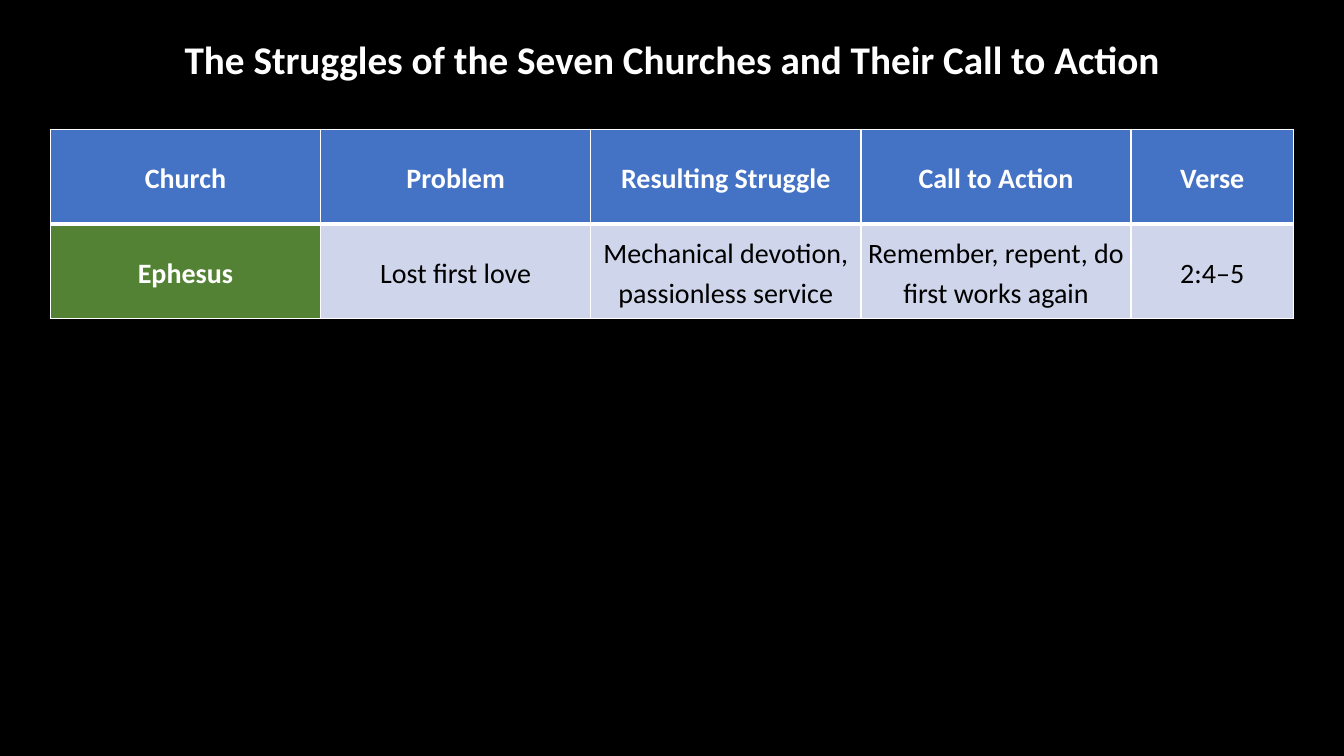
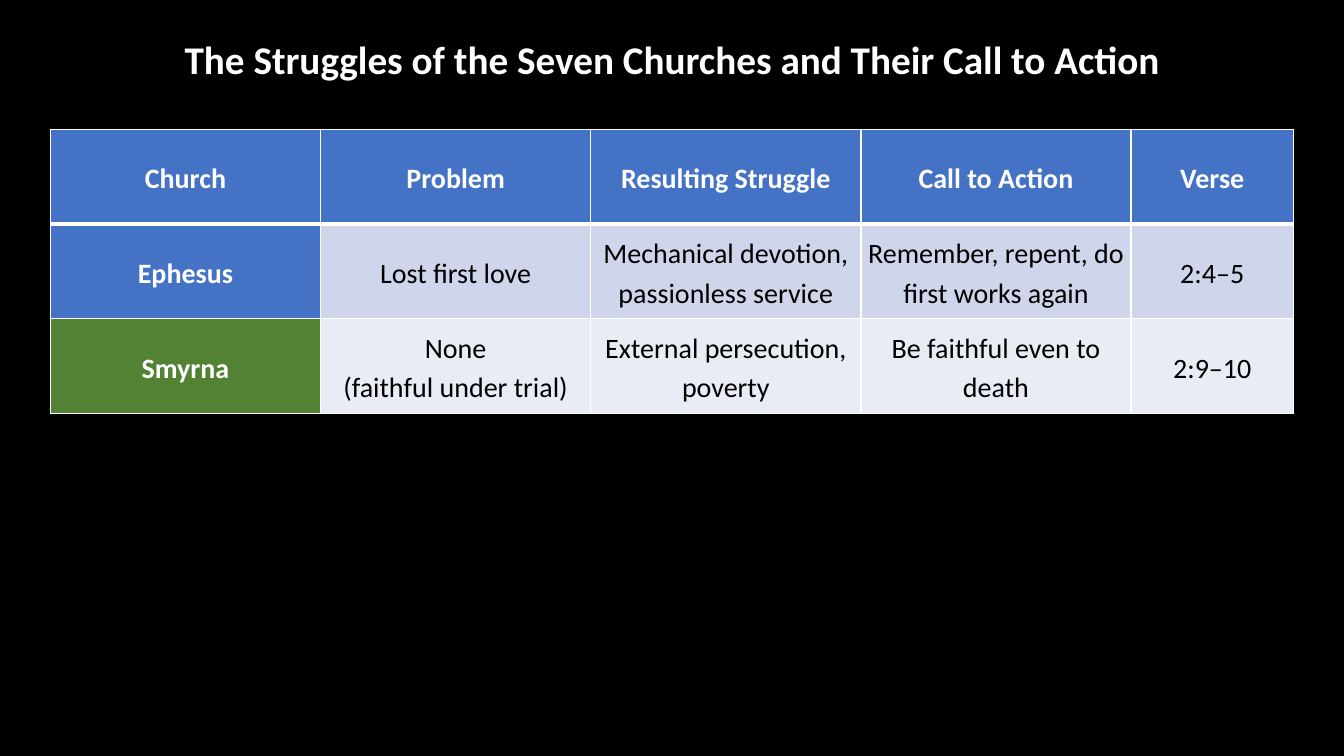
from lxml import etree
from pptx import Presentation
from pptx.dml.color import RGBColor
from pptx.enum import text
from pptx.oxml import ns
from pptx.util import Pt

BLACK = RGBColor(0x00, 0x00, 0x00)
WHITE = RGBColor(0xFF, 0xFF, 0xFF)
BLUE = RGBColor(0x44, 0x72, 0xC4)
GREEN = RGBColor(0x54, 0x82, 0x35)
BANDS = [RGBColor(0xCF, 0xD5, 0xEA), RGBColor(0xE9, 0xEB, 0xF5)]

TITLE = "The Struggles of the Seven Churches and Their Call to Action"
HEADER = ["Church", "Problem", "Resulting Struggle", "Call to Action", "Verse"]
CHURCHES = [
    ["Ephesus", "Lost first love", "Mechanical devotion, passionless service",
     "Remember, repent, do first works again", "2:4–5"],
    ["Smyrna", "None\v(faithful under trial)", "External persecution, poverty",
     "Be faithful even to death", "2:9–10"],
]
COLUMN_WIDTHS = [193, 193, 193, 193, 116]
ROW_HEIGHT = 67.7

CELL_FORMAT = {
    "vertical_anchor": text.MSO_ANCHOR.MIDDLE,
    "margin_left": Pt(0.75), "margin_right": Pt(0.75),
    "margin_top": Pt(0.75), "margin_bottom": Pt(0.75),
}
CELL_PARAGRAPH = {"line_spacing": 1.15, "space_after": Pt(8)}


def write(paragraph, content, size, color, bold, paragraph_format={}):
    paragraph.text = content
    paragraph.alignment = text.PP_ALIGN.CENTER
    for name, value in paragraph_format.items():
        setattr(paragraph, name, value)
    for run in paragraph.runs:
        run.font.color.rgb = color
        for name, value in {"name": "Calibri", "size": Pt(size), "bold": bold}.items():
            setattr(run.font, name, value)


def add_borders(cell, top, bottom):
    """Draw white cell borders; must run before the cell gets its fill."""
    properties = cell._tc.get_or_add_tcPr()
    for side, width in {"L": 1, "R": 1, "T": top, "B": bottom}.items():
        line = etree.SubElement(properties, ns.qn(f"a:ln{side}"), w=str(Pt(width)))
        fill = etree.SubElement(line, ns.qn("a:solidFill"))
        etree.SubElement(fill, ns.qn("a:srgbClr"), val=str(WHITE))


presentation = Presentation()
presentation.slide_width = Pt(960)
presentation.slide_height = Pt(540)

# Each slide reveals one more church and highlights the newest in green
for church_count in range(1, len(CHURCHES) + 1):
    slide = presentation.slides.add_slide(presentation.slide_layouts[6])
    slide.background.fill.solid()
    slide.background.fill.fore_color.rgb = BLACK

    rows = [HEADER] + CHURCHES[:church_count]
    table = slide.shapes.add_table(
        len(rows), len(HEADER), Pt(36), Pt(92.2),
        Pt(sum(COLUMN_WIDTHS)), Pt(ROW_HEIGHT * len(rows))).table
    for column, width in zip(table.columns, COLUMN_WIDTHS):
        column.width = Pt(width)

    for row_index, row in enumerate(rows):
        table.rows[row_index].height = Pt(ROW_HEIGHT)
        for column_index, content in enumerate(row):
            cell = table.cell(row_index, column_index)
            for name, value in CELL_FORMAT.items():
                setattr(cell, name, value)
            add_borders(cell, top=3 if row_index == 1 else 1,
                        bottom=3 if row_index == 0 else 1)

            is_heading = row_index == 0 or column_index == 0
            if not is_heading:
                fill_color = BANDS[(row_index - 1) % 2]
            elif row_index == church_count:
                fill_color = GREEN
            else:
                fill_color = BLUE
            cell.fill.solid()
            cell.fill.fore_color.rgb = fill_color
            write(cell.text_frame.paragraphs[0], content, 20,
                  WHITE if is_heading else BLACK, is_heading, CELL_PARAGRAPH)

    title = slide.shapes.add_textbox(Pt(96.5), Pt(21.6), Pt(767), Pt(41)).text_frame
    title.word_wrap = True
    title.auto_size = text.MSO_AUTO_SIZE.SHAPE_TO_FIT_TEXT
    write(title.paragraphs[0], TITLE, 28, WHITE, True)

presentation.save("out.pptx")
